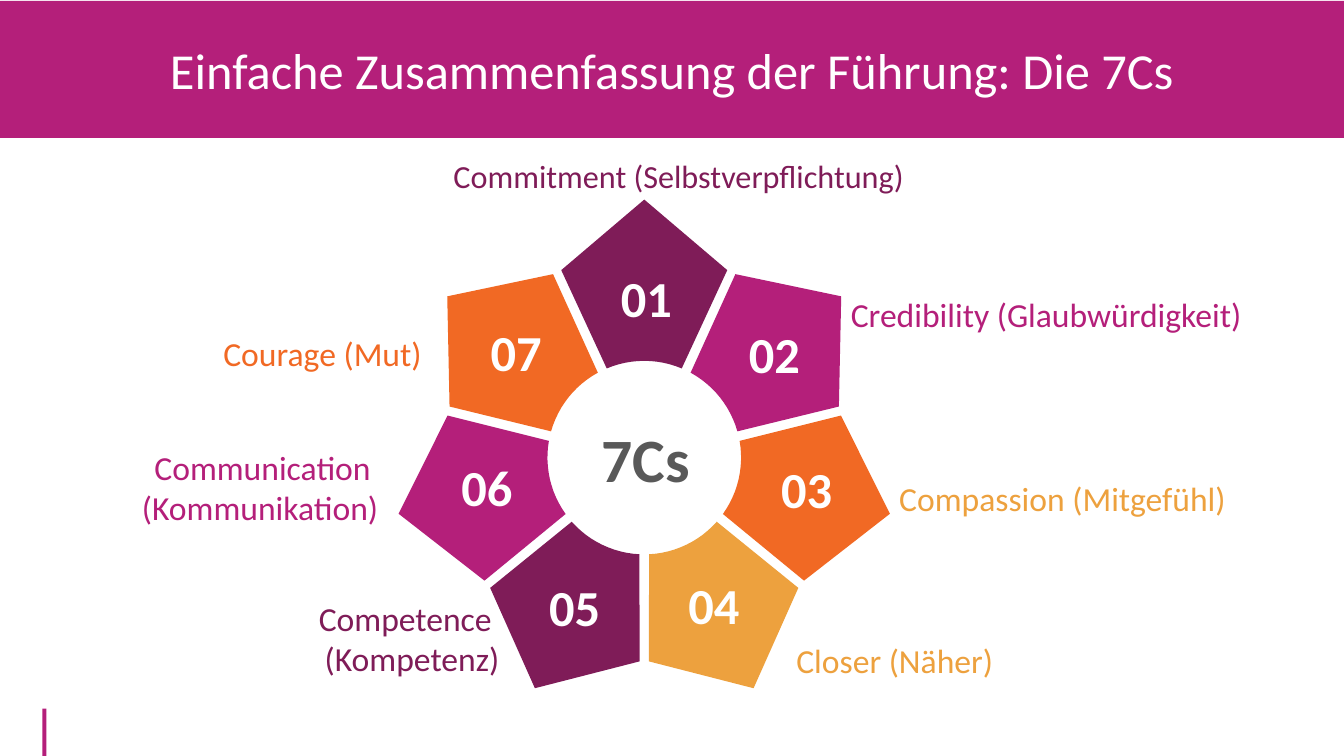
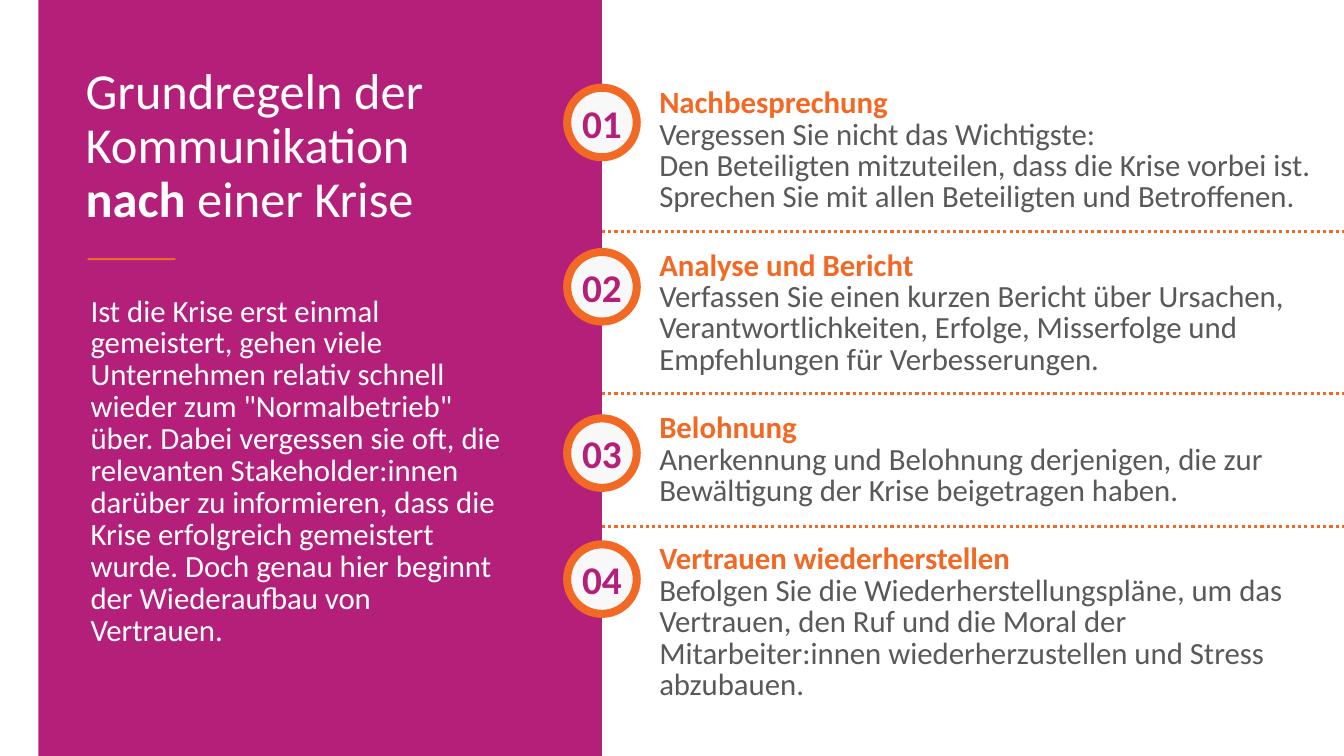
from math import cos, pi, radians, sin

from lxml import etree
from pptx import Presentation
from pptx.dml.color import RGBColor
from pptx.enum.dml import MSO_LINE
from pptx.enum.shapes import MSO_CONNECTOR, MSO_SHAPE
from pptx.enum.text import MSO_ANCHOR, MSO_AUTO_SIZE, PP_ALIGN
from pptx.oxml.ns import qn
from pptx.util import Inches, Pt

LEFT, CENTER, RIGHT = PP_ALIGN.LEFT, PP_ALIGN.CENTER, PP_ALIGN.RIGHT
TOP, MIDDLE, BOTTOM = MSO_ANCHOR.TOP, MSO_ANCHOR.MIDDLE, MSO_ANCHOR.BOTTOM
RECT, OVAL = MSO_SHAPE.RECTANGLE, MSO_SHAPE.OVAL
STRAIGHT, DOTTED = MSO_CONNECTOR.STRAIGHT, MSO_LINE.ROUND_DOT

THEME = {
    "font": "Calibri",
    "colors": {
        "plum": "7F1C58", "magenta": "B41F7A", "orange": "F16924",
        "amber": "EDA13E", "grey": "595959", "white": "FFFFFF", "pale": "F8F8F8",
    },
    "sizes": {"title": 36, "number": 36, "hub": 44, "label": 24, "top_label": 23,
              "body": 22, "badge": 28},
}

WHEEL_TITLE = [("Einfache Zusammenfassung der Führung: Die 7Cs", False)]
HUB = ("7Cs", (5.86, 4.12, 1.09, 0.84))
PETALS = [
    {"lines": ["Commitment (Selbstverpflichtung)"], "color": "plum", "label": "plum",
     "box": (4.25, 1.49, 4.97, 0.49), "number_at": (6.04, 2.6), "align": CENTER,
     "size": "top_label"},
    {"lines": ["Credibility (Glaubwürdigkeit)"], "color": "magenta", "label": "magenta",
     "box": (8.34, 2.87, 4.91, 0.5), "number_at": (7.31, 3.16), "align": LEFT},
    {"lines": ["Compassion (Mitgefühl)"], "color": "orange", "label": "amber",
     "box": (8.82, 4.69, 3.47, 0.5), "number_at": (7.63, 4.5), "align": LEFT},
    {"lines": ["Closer (Näher)"], "color": "amber", "label": "amber",
     "box": (7.8, 6.3, 2.17, 0.5), "number_at": (6.71, 5.65), "align": LEFT},
    {"lines": ["Competence ", "(Kompetenz)"], "color": "plum", "label": "plum",
     "box": (3.04, 5.87, 2.01, 0.91), "number_at": (5.33, 5.67), "align": RIGHT},
    {"lines": ["Communication ", "(Kommunikation)"], "color": "magenta", "label": "magenta",
     "box": (1.28, 4.37, 2.57, 0.91), "number_at": (4.46, 4.48), "align": RIGHT},
    {"lines": ["Courage (Mut)"], "color": "orange", "label": "orange",
     "box": (2.09, 3.25, 2.19, 0.5), "number_at": (4.75, 3.14), "align": RIGHT},
]

RULES_TITLE = [("Grundregeln der Kommunikation ", False), ("nach ", True),
               ("einer Krise", False)]
INTRO = ("Ist die Krise erst einmal gemeistert, gehen viele Unternehmen relativ schnell "
         "wieder zum \"Normalbetrieb\" über. Dabei vergessen sie oft, die relevanten "
         "Stakeholder:innen darüber zu informieren, dass die Krise erfolgreich gemeistert "
         "wurde. Doch genau hier beginnt der Wiederaufbau von Vertrauen.")
RULES = [
    ("Nachbesprechung", 0.83, [
        "Vergessen Sie nicht das Wichtigste:",
        "Den Beteiligten mitzuteilen, dass die Krise vorbei ist. "
        "Sprechen Sie mit allen Beteiligten und Betroffenen."]),
    ("Analyse und Bericht", 2.46, [
        "Verfassen Sie einen kurzen Bericht über Ursachen, Verantwortlichkeiten, "
        "Erfolge, Misserfolge und Empfehlungen für Verbesserungen."]),
    ("Belohnung", 4.11, [
        "Anerkennung und Belohnung derjenigen, die zur Bewältigung der Krise "
        "beigetragen haben."]),
    ("Vertrauen wiederherstellen", 5.36, [
        "Befolgen Sie die Wiederherstellungspläne, um das Vertrauen, den Ruf und die "
        "Moral der Mitarbeiter:innen wiederherzustellen und Stress abzubauen."]),
]
DIVIDERS = [2.3, 3.9, 5.22]

WHEEL_X, WHEEL_Y, HUB_Y = 6.39, 4.53, 4.54
WHEEL_STRETCH, HUB_RADIUS, HUB_HALF_ANGLE, ARC_STEPS = 0.98, 0.96, 22.8, 12
PETAL_EDGE = [(-0.84, -1.85), (0, -2.55), (0.84, -1.85)]
PANEL_RIGHT, BADGE, RING = 5.97, 0.77, 0.08


def rgb(name):
    return RGBColor.from_string(THEME["colors"][name])


def set_attrs(obj, values):
    for name, value in values.items():
        setattr(obj, name, value)


def style_shape(sp, color):
    sp.shadow.inherit = False
    sp.fill.solid()
    sp.fill.fore_color.rgb = rgb(color)
    sp.line.fill.background()
    return sp


def add_block(slide, kind, box, color):
    return style_shape(slide.shapes.add_shape(kind, *map(Inches, box)), color)


def set_frame(tf, anchor=TOP, wrap=True):
    set_attrs(tf, {"word_wrap": wrap, "vertical_anchor": anchor,
                   "auto_size": MSO_AUTO_SIZE.NONE})


def add_paragraph(tf, first, runs, size, color, align=LEFT, **spacing):
    p = tf.paragraphs[0] if first else tf.add_paragraph()
    set_attrs(p, {"alignment": align, **spacing})
    for text, bold in runs:
        r = p.add_run()
        r.text = text
        set_attrs(r.font, {"name": THEME["font"], "size": Pt(THEME["sizes"][size]),
                           "bold": bold})
        r.font.color.rgb = rgb(color)


def add_text(slide, box, lines, size, color, align=LEFT, anchor=TOP, wrap=True,
             bold=False, **spacing):
    tf = slide.shapes.add_textbox(*map(Inches, box)).text_frame
    set_frame(tf, anchor, wrap)
    for i, line in enumerate(lines):
        add_paragraph(tf, i == 0, [(line, bold)], size, color, align, **spacing)


def add_titled_slide(prs, layout, runs, title_box, align, backdrop):
    slide = prs.slides.add_slide(layout)
    panel = add_block(slide, RECT, backdrop, "magenta")
    slide.shapes.element.insert(2, panel.element)
    title = slide.shapes.title
    set_attrs(title, dict(zip(("left", "top", "width", "height"), map(Inches, title_box))))
    set_frame(title.text_frame)
    add_paragraph(title.text_frame, True, runs, "title", "white", align, line_spacing=0.9)
    return slide


def add_petal(slide, index, count, color):
    turn = 2 * pi * index / count
    points = [(WHEEL_X + WHEEL_STRETCH * (x * cos(turn) - y * sin(turn)),
               WHEEL_Y + x * sin(turn) + y * cos(turn)) for x, y in PETAL_EDGE]
    half = radians(HUB_HALF_ANGLE)
    for step in range(ARC_STEPS + 1):
        angle = turn + half - 2 * half * step / ARC_STEPS
        points.append((WHEEL_X + HUB_RADIUS * sin(angle), HUB_Y - HUB_RADIUS * cos(angle)))
    points = [(Inches(x), Inches(y)) for x, y in points]
    outline = slide.shapes.build_freeform(*points[0], scale=1.0)
    outline.add_line_segments(points[1:], close=True)
    style_shape(outline.convert_to_shape(), color)


def build_wheel(prs, layout):
    slide = add_titled_slide(prs, layout, WHEEL_TITLE, (0, 0.41, 13.33, 0.8), CENTER,
                             (0, 0.01, 13.33, 1.36))
    for i, petal in enumerate(PETALS):
        add_petal(slide, i, len(PETALS), petal["color"])
        add_text(slide, (*petal["number_at"], 0.74, 0.71), [f"{i + 1:02}"], "number",
                 "white", CENTER, bold=True)
        add_text(slide, petal["box"], petal["lines"], petal.get("size", "label"),
                 petal["label"], petal["align"], BOTTOM, wrap=False)
    text, box = HUB
    add_text(slide, box, [text], "hub", "grey", CENTER, BOTTOM, wrap=False, bold=True)
    return slide


def add_badge(slide, number, top):
    side = BADGE - RING
    sp = add_block(slide, OVAL, (PANEL_RIGHT - side / 2, top + RING / 2, side, side), "pale")
    sp.line.color.rgb = rgb("orange")
    sp.line.width = Inches(RING)
    tf = sp.text_frame
    set_frame(tf, MIDDLE, wrap=False)
    set_attrs(tf, dict.fromkeys(
        ("margin_left", "margin_right", "margin_top", "margin_bottom"), 0))
    add_paragraph(tf, True, [(f"{number:02}", True)], "badge", "magenta", CENTER)


def add_divider(slide, y):
    line = slide.shapes.add_connector(STRAIGHT, Inches(PANEL_RIGHT), Inches(y),
                                      Inches(13.33), Inches(y))
    set_attrs(line.line, {"width": Pt(2.25), "dash_style": DOTTED})
    line.line.color.rgb = rgb("orange")
    etree.SubElement(line.element.spPr, qn("a:effectLst"))


def build_rules(prs, layout):
    slide = add_titled_slide(prs, layout, RULES_TITLE, (0.75, 0.6, 4, 1.8), LEFT,
                             (0.38, 0, PANEL_RIGHT - 0.38, 7.5))
    add_block(slide, RECT, (0.87, 2.56, 0.87, 0.02), "orange")
    add_text(slide, (0.8, 2.89, 4.33, 4.5), [INTRO], "body", "white",
             line_spacing=Pt(22.8))
    tf = slide.shapes.add_textbox(*map(Inches, (6.44, 0.83, 6.89, 6.5))).text_frame
    set_frame(tf)
    for i, (heading, top, lines) in enumerate(RULES):
        add_paragraph(tf, i == 0, [(heading, True)], "body", "orange",
                      line_spacing=Pt(22.4), space_before=Pt(26.5 if i else 0))
        for line in lines:
            add_paragraph(tf, False, [(line, False)], "body", "grey",
                          line_spacing=Pt(22.4), space_before=Pt(0))
        add_badge(slide, i + 1, top)
    for y in DIVIDERS:
        add_divider(slide, y)


def main():
    prs = Presentation()
    set_attrs(prs, {"slide_width": Inches(13.33), "slide_height": Inches(7.5)})
    layout = prs.slide_layouts[5]
    wheel = build_wheel(prs, layout)
    build_rules(prs, layout)
    accent = add_block(wheel, RECT, (0.42, 7.03, 0.04, 0.47), "magenta")
    layout.shapes.element.append(accent.element)
    prs.save("out.pptx")


if __name__ == "__main__":
    main()
